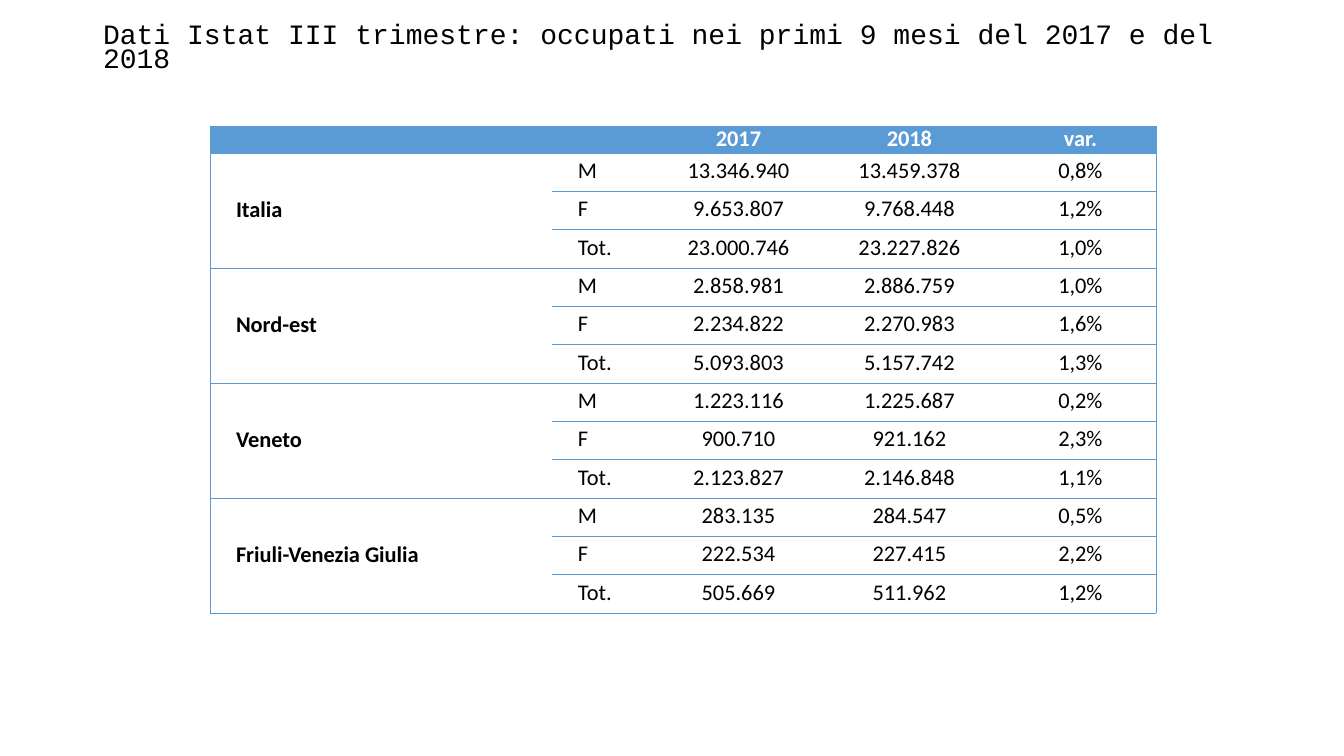
from dataclasses import dataclass

import pptx
import pptx.dml.color
import pptx.enum.text
import pptx.oxml
import pptx.oxml.ns
import pptx.util

RGBColor = pptx.dml.color.RGBColor
BLUE = RGBColor(0x5B, 0x9B, 0xD5)
WHITE = RGBColor(0xFF, 0xFF, 0xFF)
BLACK = RGBColor(0x00, 0x00, 0x00)

EMU_PER_PX = 914400 / 100.8
TITLE = "Dati Istat III trimestre: occupati nei primi 9 mesi del 2017 e del 2018"
HEADINGS = ("2017", "2018", "var.")
SEXES = ("M", "F", "Tot.")
COLUMN_WIDTHS = (342, 91, 171, 171, 171)
HEADER_HEIGHT = 27
GROUP_HEIGHTS = (38, 38, 39)
TABLE_LEFT, TABLE_TOP = 210, 126
NO_STYLE = "{2D5ABB26-0587-4C30-8999-92F81FD0307C}"


@dataclass(frozen=True)
class Area:
    name: str
    figures: tuple[tuple[str, str, str], ...]  # one line for each of SEXES


AREAS = (
    Area("Italia", (("13.346.940", "13.459.378", "0,8%"),
                    ("9.653.807", "9.768.448", "1,2%"),
                    ("23.000.746", "23.227.826", "1,0%"))),
    Area("Nord-est", (("2.858.981", "2.886.759", "1,0%"),
                      ("2.234.822", "2.270.983", "1,6%"),
                      ("5.093.803", "5.157.742", "1,3%"))),
    Area("Veneto", (("1.223.116", "1.225.687", "0,2%"),
                    ("900.710", "921.162", "2,3%"),
                    ("2.123.827", "2.146.848", "1,1%"))),
    Area("Friuli-Venezia Giulia", (("283.135", "284.547", "0,5%"),
                                   ("222.534", "227.415", "2,2%"),
                                   ("505.669", "511.962", "1,2%"))),
)


def px(length: int) -> pptx.util.Emu:
    return pptx.util.Emu(round(length * EMU_PER_PX))


def write_cell(cell, text: str, color: RGBColor = BLACK, bold: bool = False,
               centered: bool = False) -> None:
    paragraph = cell.text_frame.paragraphs[0]
    paragraph.line_spacing = pptx.util.Pt(18)
    align = pptx.enum.text.PP_ALIGN
    paragraph.alignment = align.CENTER if centered else align.LEFT
    properties = paragraph._p.get_or_add_pPr()
    properties.set("marL", "0")
    properties.set("indent", str(px(20)))
    run = paragraph.add_run()
    run.text = text
    run.font.name = "Calibri"
    run.font.size = pptx.util.Pt(16)
    run.font.bold = bold
    run.font.color.rgb = color


def format_cell(cell, header: bool, sides: str) -> None:
    """Set insets and fill, and rule the given sides (letters of LRTB)."""
    cell.vertical_anchor = pptx.enum.text.MSO_ANCHOR.MIDDLE
    cell.margin_left = cell.margin_right = px(6)
    cell.margin_top = cell.margin_bottom = 0
    if header:
        cell.fill.solid()
        cell.fill.fore_color.rgb = BLUE
    else:
        cell.fill.background()
    properties = cell._tc.get_or_add_tcPr()
    for position, side in enumerate(sides):
        properties.insert(position, pptx.oxml.parse_xml(
            f'<a:ln{side} {pptx.oxml.ns.nsdecls("a")} w="6350"><a:solidFill>'
            f'<a:srgbClr val="{BLUE}"/></a:solidFill></a:ln{side}>'))


def ruled_sides(row: int, column: int) -> str:
    sides = "L" if column == 0 else ""
    if column == len(COLUMN_WIDTHS) - 1:
        sides += "R"
    if column > 0 or row == 0 or row % len(SEXES) == 1:
        sides += "T"
    if column > 0 or row % len(SEXES) == 0 or row % len(SEXES) == 1:
        sides += "B"
    return sides


def add_title(slide) -> None:
    title = slide.shapes.title
    title.left, title.top, title.width, title.height = px(93), px(18), px(1159), px(62)
    frame = title.text_frame
    frame.word_wrap = True
    frame.auto_size = pptx.enum.text.MSO_AUTO_SIZE.TEXT_TO_FIT_SHAPE
    frame.vertical_anchor = pptx.enum.text.MSO_ANCHOR.MIDDLE
    paragraph = frame.paragraphs[0]
    paragraph.alignment = pptx.enum.text.PP_ALIGN.LEFT
    paragraph.line_spacing = 0.9
    run = paragraph.add_run()
    run.text = TITLE
    run.font.name = "Courier New"
    run.font.size = pptx.util.Pt(22)
    run.font.color.rgb = BLACK


def add_employment_table(slide) -> None:
    heights = (HEADER_HEIGHT,) + GROUP_HEIGHTS * len(AREAS)
    frame = slide.shapes.add_table(
        len(heights), len(COLUMN_WIDTHS), px(TABLE_LEFT), px(TABLE_TOP),
        px(sum(COLUMN_WIDTHS)), px(sum(heights)))
    table = frame.table
    table._tbl.tblPr.find(pptx.oxml.ns.qn("a:tableStyleId")).text = NO_STYLE
    table.horz_banding = False
    for column, width in zip(table.columns, COLUMN_WIDTHS):
        column.width = px(width)
    for row, height in zip(table.rows, heights):
        row.height = px(height)

    # Fills and rules
    for row in range(len(heights)):
        for column in range(len(COLUMN_WIDTHS)):
            format_cell(table.cell(row, column), row == 0, ruled_sides(row, column))

    # Header row
    for column, heading in enumerate(HEADINGS, start=2):
        write_cell(table.cell(0, column), heading, WHITE, bold=True, centered=True)
    for column in range(2):
        blank = table.cell(0, column).text_frame.paragraphs[0]
        blank.font.size = pptx.util.Pt(16)
        blank.line_spacing = pptx.util.Pt(18)

    # Areas, three rows each
    for index, area in enumerate(AREAS):
        first = 1 + index * len(SEXES)
        area_cell = table.cell(first, 0)
        area_cell.merge(table.cell(first + len(SEXES) - 1, 0))
        write_cell(area_cell, area.name, bold=True)
        for row, (sex, figures) in enumerate(zip(SEXES, area.figures), start=first):
            write_cell(table.cell(row, 1), sex)
            for column, figure in enumerate(figures, start=2):
                write_cell(table.cell(row, column), figure, centered=True)


def main() -> None:
    presentation = pptx.Presentation()
    presentation.slide_width, presentation.slide_height = px(1344), px(756)
    slide = presentation.slides.add_slide(presentation.slide_layouts[5])
    add_title(slide)
    add_employment_table(slide)
    presentation.save("out.pptx")


if __name__ == "__main__":
    main()
